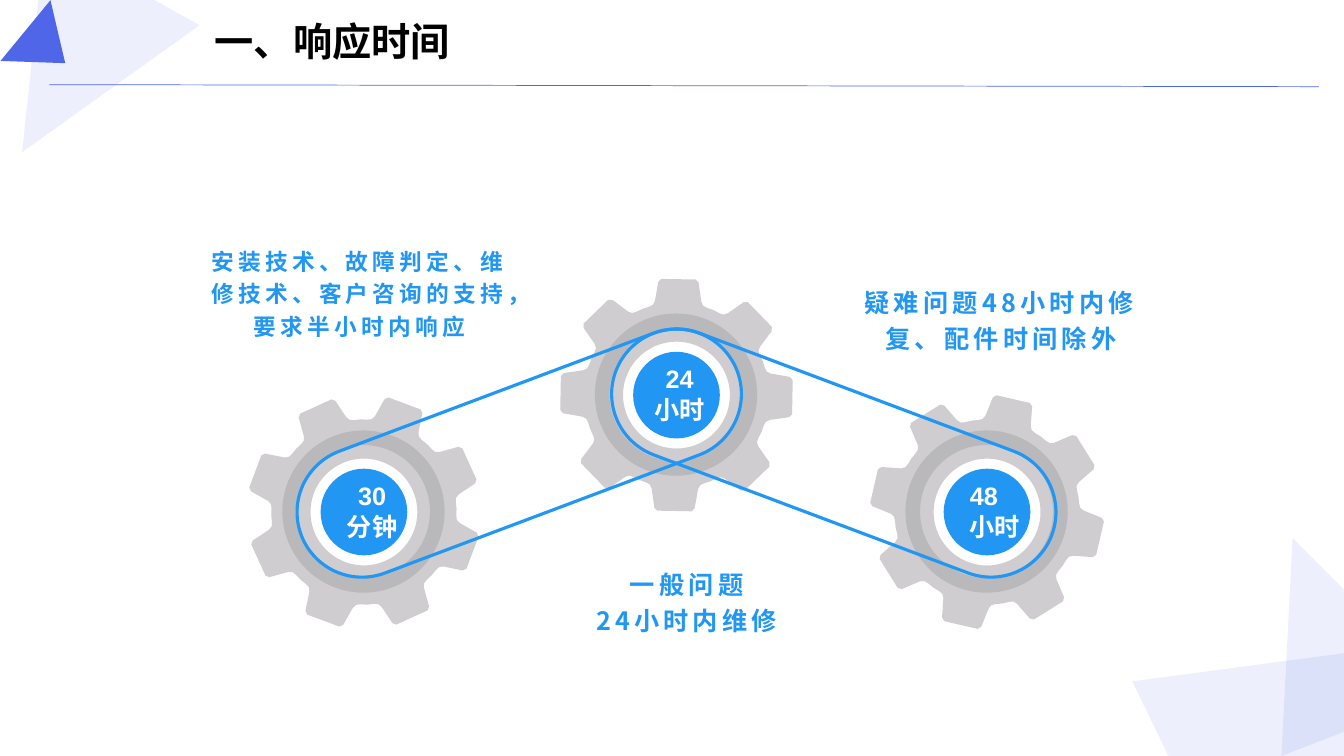
from math import atan2, cos, degrees, hypot, radians, sin

from lxml.etree import SubElement
from pptx import Presentation
from pptx.dml.color import RGBColor
from pptx.enum.shapes import MSO_CONNECTOR, MSO_SHAPE
from pptx.enum.text import MSO_ANCHOR, MSO_AUTO_SIZE, PP_ALIGN
from pptx.oxml.ns import qn
from pptx.util import Inches, Pt

INDIGO = RGBColor(0x50, 0x66, 0xE9)
BLUE = RGBColor(0x21, 0x96, 0xF3)
GRAY = RGBColor(0xCF, 0xCD, 0xD0)
BLACK = RGBColor(0, 0, 0)
WHITE = RGBColor(0xFF, 0xFF, 0xFF)
CJK_FONT = "Noto Sans CJK SC"

# One tooth pointing up, as (sideways, outward) offsets from the gear centre
TOOTH = [(-0.35, 0.85), (-0.29, 0.87), (-0.25, 0.89), (-0.23, 0.93),
         (-0.2, 1.12), (-0.17, 1.15)]
TOOTH += [(-x, y) for x, y in reversed(TOOTH)]
TEETH = 8

# Centre x, centre y, turn of the first tooth
GEARS = [(6.71, 3.92, 1), (9.79, 5.08, 13), (3.61, 5.08, -24.5)]

CORNERS = [
    [(0.38, 0), (1.53, 0), (1.98, 0.25), (0.22, 1.51)],
    [(12.82, 5.34), (13.33, 5.85), (13.33, 7.26), (12.71, 7.5)],
    [(13.33, 6.48), (13.33, 7.5), (11.59, 7.5), (11.23, 6.76)],
]

# Box, paragraphs, alignment
DIAL_LABELS = [
    ((3.34, 4.72, 0.7, 0.71), ["30", "分钟"], PP_ALIGN.CENTER),
    ((6.39, 3.56, 0.7, 0.71), ["24", "小时"], PP_ALIGN.CENTER),
    ((9.52, 4.72, 0.7, 0.71), ["48", "小时"], PP_ALIGN.LEFT),
]

# Box, paragraphs, size, anchor, top and bottom inset
NOTES = [
    ((1.95, 2.4, 3.23, 1.32), ["安装技术、故障判定、维修技术、客户咨询的支持，要求半小时内响应"],
     16.2, MSO_ANCHOR.TOP, (0, 0.05)),
    ((5.38, 5.21, 2.86, 1.1), ["一般问题", "24小时内维修"],
     18, MSO_ANCHOR.BOTTOM, (0.05, 0)),
    ((8.46, 2.79, 2.94, 0.94), ["疑难问题48小时内修复、配件时间除外"],
     18, MSO_ANCHOR.TOP, (0, 0.05)),
]


def polar(cx, cy, radius, angle):
    """Point at a clockwise angle in degrees from straight up."""
    a = radians(angle)
    return cx + radius * sin(a), cy - radius * cos(a)


class SlideBuilder:
    def __init__(self, prs):
        self.s = prs.slides.add_slide(prs.slide_layouts[5])

    def paint(self, sp, color, alpha=None):
        sp.shadow.inherit = False
        sp.line.fill.background()
        sp.fill.solid()
        sp.fill.fore_color.rgb = color
        if alpha:
            clr = sp._element.spPr.find(qn("a:solidFill"))[0]
            SubElement(clr, qn("a:alpha"), val=str(alpha * 1000))

    def shape(self, kind, box, color, alpha=None, rotation=0):
        sp = self.s.shapes.add_shape(kind, *map(Inches, box))
        sp.rotation = rotation
        self.paint(sp, color, alpha)
        return sp

    def outline(self, contours, color, alpha=None):
        """Fill closed contours; later ones cut holes in the first."""
        contours = [[(Inches(x), Inches(y)) for x, y in c] for c in contours]
        fb = self.s.shapes.build_freeform(*contours[0][0])
        for i, contour in enumerate(contours):
            if i:
                fb.move_to(*contour[0])
            fb.add_line_segments(contour[1:], close=True)
        self.paint(fb.convert_to_shape(), color, alpha)

    def gear(self, cx, cy, turn):
        rim = [polar(cx, cy, hypot(x, y), turn + 360 / TEETH * i + degrees(atan2(x, y)))
               for i in range(TEETH) for x, y in TOOTH]
        hole = [polar(cx, cy, 0.53, -a) for a in range(0, 360, 5)]
        self.outline([rim, hole], GRAY)
        ring = self.shape(MSO_SHAPE.DONUT, (cx - 0.81, cy - 0.81, 1.61, 1.61), BLACK, 10)
        ring.adjustments[0] = 0.09
        self.shape(MSO_SHAPE.OVAL, (cx - 0.43, cy - 0.43, 0.86, 0.86), BLUE)

    def belt(self, left, rotation):
        sp = self.shape(MSO_SHAPE.ROUNDED_RECTANGLE, (left, 3.85, 4.62, 1.29), BLUE,
                        rotation=rotation)
        sp.adjustments[0] = 0.5
        sp.fill.background()
        sp.line.color.rgb = BLUE
        sp.line.width = Pt(2.25)

    def rule(self, x1, y1, x2, y2):
        line = self.s.shapes.add_connector(MSO_CONNECTOR.STRAIGHT,
                                           *map(Inches, (x1, y1, x2, y2)))
        line.line.color.rgb = INDIGO
        line.line.width = Pt(0.5)
        SubElement(line._element.spPr, qn("a:effectLst"))

    def add_lines(self, tf, lines, size, color, font, align, spacing=None, tracking=0):
        for i, text in enumerate(lines):
            p = tf.add_paragraph() if i else tf.paragraphs[0]
            p.alignment = align
            if spacing:
                p.line_spacing = spacing
            r = p.add_run()
            r.text = text
            r.font.size = Pt(size)
            r.font.bold = True
            r.font.color.rgb = color
            r.font.name = font
            rPr = r._r.get_or_add_rPr()
            SubElement(rPr, qn("a:ea"), typeface=CJK_FONT)
            if tracking:
                rPr.set("spc", str(tracking * 100))

    def title(self, text, box):
        sp = self.s.shapes.title
        sp.left, sp.top, sp.width, sp.height = map(Inches, box)
        tf = sp.text_frame
        tf.word_wrap = False
        tf.auto_size = MSO_AUTO_SIZE.SHAPE_TO_FIT_TEXT
        tf.vertical_anchor = MSO_ANCHOR.TOP
        self.add_lines(tf, [text], 28, BLACK, CJK_FONT, PP_ALIGN.LEFT, 1.0)

    def dial_label(self, box, lines, align):
        tf = self.s.shapes.add_textbox(*map(Inches, box)).text_frame
        tf.word_wrap = False
        tf.auto_size = MSO_AUTO_SIZE.SHAPE_TO_FIT_TEXT
        self.add_lines(tf, lines, 18, WHITE, "Arial", align)

    def note(self, box, lines, size, anchor, insets):
        tf = self.s.shapes.add_textbox(*map(Inches, box)).text_frame
        tf.word_wrap = True
        tf.vertical_anchor = anchor
        tf.margin_top, tf.margin_bottom = map(Inches, insets)
        self.add_lines(tf, lines, size, BLUE, CJK_FONT, PP_ALIGN.CENTER, 1.2, 3)


def main():
    prs = Presentation()
    prs.slide_width, prs.slide_height = Inches(13.33), Inches(7.5)
    b = SlideBuilder(prs)
    for corner in CORNERS:
        b.outline([corner], INDIGO, 10)
    b.shape(MSO_SHAPE.ISOSCELES_TRIANGLE, (0.06, 0.21, 0.78, 0.51), INDIGO, rotation=129.4)
    b.rule(0.49, 0.84, 13.08, 0.86)
    for gear in GEARS:
        b.gear(*gear)
    b.belt(2.84, -20.6)
    b.belt(5.96, 20.6)
    for label in DIAL_LABELS:
        b.dial_label(*label)
    for note in NOTES:
        b.note(*note)
    b.title("一、响应时间", (2.03, 0.12, 2.54, 0.57))
    prs.save("out.pptx")


if __name__ == "__main__":
    main()
